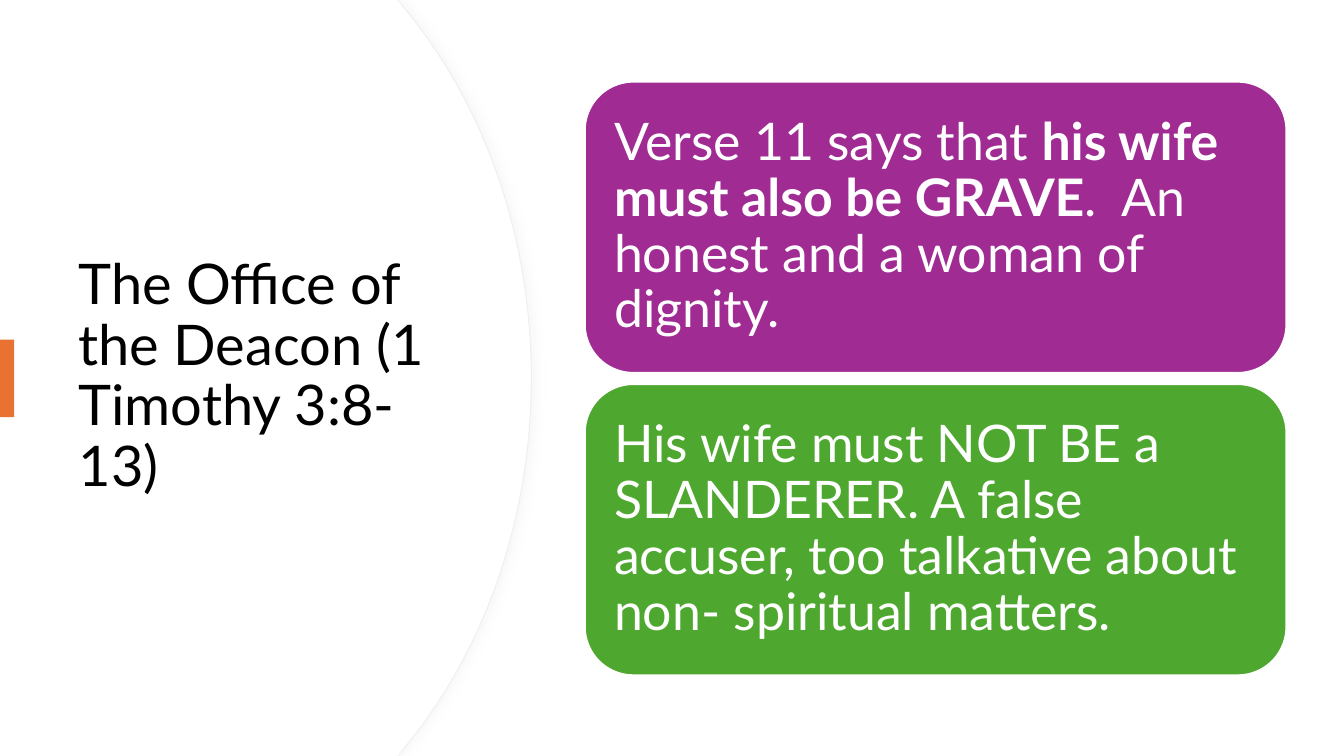
import pptx
import pptx.util
import pptx.dml.color
import pptx.enum.shapes
import pptx.enum.text
import pptx.oxml
import pptx.oxml.ns

Inches, Pt = pptx.util.Inches, pptx.util.Pt
SHAPES = pptx.enum.shapes.MSO_SHAPE
ALIGN = pptx.enum.text.PP_ALIGN
qn = pptx.oxml.ns.qn

COLOURS = {"white": "FFFFFF", "black": "000000", "edge": "EFEFEF", "shadow": "D9D9D9",
           "accent": "E97132", "purple": "A02B93", "green": "4EA72E"}
FONT = "Lato"
PAGE_SIZE = (13.33, 7.5)

TITLE = [("The Office of the Deacon (1 Timothy 3:8-13)", False)]
CARDS = [
    ("purple", [("Verse 11 says that ", False),
                ("his wife must also be GRAVE", True),
                (".  An honest and a woman of dignity.", False)]),
    ("green", [("His wife must NOT BE a SLANDERER. A false accuser, "
                "too talkative about non- spiritual matters.", False)]),
]
CARD_LEFT, CARD_TOP, CARD_WIDTH, CARD_HEIGHT, CARD_GAP = 5.8, 0.81, 6.96, 2.89, 0.11


def colour(name):
    return pptx.dml.color.RGBColor.from_string(COLOURS[name])


def paint(shape, fill, line=None, width=0):
    shape.shadow.inherit = False
    shape.fill.solid()
    shape.fill.fore_color.rgb = colour(fill)
    if line:
        shape.line.color.rgb = colour(line)
        shape.line.width = Pt(width)
    else:
        shape.line.fill.background()


def write(shape, spans, size, ink, inset):
    frame = shape.text_frame
    settings = {"word_wrap": True, "auto_size": pptx.enum.text.MSO_AUTO_SIZE.NONE,
                "vertical_anchor": pptx.enum.text.MSO_ANCHOR.MIDDLE}
    settings.update({f"margin_{side}": Inches(inset[0]) for side in ("left", "right")})
    settings.update({f"margin_{side}": Inches(inset[1]) for side in ("top", "bottom")})
    for name, value in settings.items():
        setattr(frame, name, value)
    para = frame.paragraphs[0]
    para.alignment, para.line_spacing = ALIGN.LEFT, 0.9
    for text, bold in spans:
        span = para.add_run()
        span.text = text
        for name, value in {"name": FONT, "size": Pt(size), "bold": bold}.items():
            setattr(span.font, name, value)
        span.font.color.rgb = colour(ink)


def bend(segments):
    """Turn three straight segments into one cubic curve through their end points."""
    curve = pptx.oxml.parse_xml(f'<a:cubicBezTo {pptx.oxml.ns.nsdecls("a")}/>')
    segments[0].addprevious(curve)
    for segment in segments:
        curve.append(segment[0])
        segment.getparent().remove(segment)


def add_curved_panel(page, right):
    """A full-height white panel whose right side bulges out to the given x."""
    height = PAGE_SIZE[1]
    upper = [(3.94, 0), (right - 1.26, 0.08),
             (right - 0.48, 1.02), (right, 2.32), (right, height / 2)]
    lower = [(x, height - y) for x, y in reversed(upper[:-1])]
    outline = upper + lower + [(0, height)]
    builder = page.shapes.build_freeform(0, 0)
    builder.add_line_segments([(Inches(x), Inches(y)) for x, y in outline], close=True)
    panel = builder.convert_to_shape()
    segments = list(panel.element.spPr.iter(qn("a:lnTo")))
    for first in (2, 5):
        bend(segments[first:first + 3])
    return panel


def add_shadow(shape):
    effects = shape.element.spPr.find(qn("a:effectLst"))
    effects.append(pptx.oxml.parse_xml(
        f'<a:outerShdw {pptx.oxml.ns.nsdecls("a")} blurRad="{Pt(7)}" dist="{Pt(3)}" '
        f'dir="0" algn="l" rotWithShape="0"><a:srgbClr val="{COLOURS["shadow"]}">'
        '<a:alpha val="20000"/></a:srgbClr></a:outerShdw>'))


def main():
    deck = pptx.Presentation()
    deck.slide_width, deck.slide_height = map(Inches, PAGE_SIZE)
    page = deck.slides.add_slide(deck.slide_layouts[5])

    edge_panel = add_curved_panel(page, 5.27)
    paint(edge_panel, "white", "edge", 0.75)
    add_shadow(edge_panel)
    paint(add_curved_panel(page, 5.26), "white")

    title = page.shapes.title
    place = {"left": 0.68, "top": 1.27, "width": 3.94, "height": 4.95}
    for name, value in place.items():
        setattr(title, name, Inches(value))
    write(title, TITLE, 40, "black", (0.1, 0.05))
    page.shapes.element.append(title.element)  # bring in front of the panels

    accent = page.shapes.add_shape(SHAPES.RECTANGLE, *map(Inches, (0, 3.37, 0.14, 0.77)))
    paint(accent, "accent")

    for row, (fill, spans) in enumerate(CARDS):
        top = CARD_TOP + row * (CARD_HEIGHT + CARD_GAP)
        box = page.shapes.add_shape(SHAPES.ROUNDED_RECTANGLE, *map(
            Inches, (CARD_LEFT, top, CARD_WIDTH, CARD_HEIGHT)))
        paint(box, fill, "white", 1.5)
        write(box, spans, 37, "white", (0.15, 0.15))

    deck.save("out.pptx")


if __name__ == "__main__":
    main()
